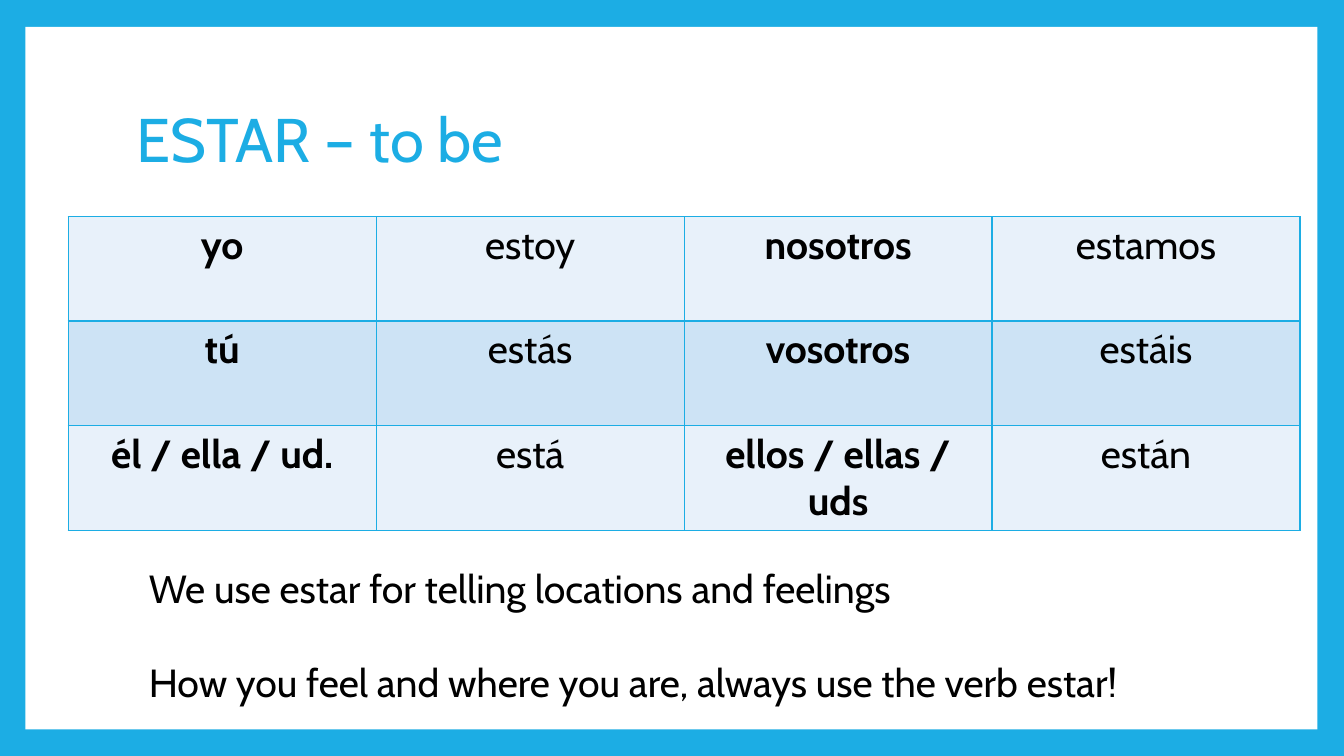
from lxml.etree import SubElement
from pptx import Presentation
from pptx.dml.color import RGBColor
from pptx.enum.shapes import MSO_SHAPE
from pptx.enum.text import MSO_ANCHOR, PP_ALIGN
from pptx.oxml.ns import qn
from pptx.util import Cm, Pt

FONT = "Cabin"
BLUE = "1CADE4"
BLACK = "000000"
WHITE = "FFFFFF"
BANDS = ["E8F1FA", "CDE3F5"]
CONJUGATION = [
    ["yo", "estoy", "nosotros", "estamos"],
    ["tú", "estás", "vosotros", "estáis"],
    ["él / ella / ud.", "está", "ellos / ellas / uds", "están"],
]
USAGE = [
    "We use estar for telling locations and feelings",
    "How you feel and where you are, always use the verb estar!",
]


def paint(color_format, color):
    color_format.rgb = RGBColor.from_string(color)


def fill_with(fill, color):
    fill.solid()
    paint(fill.fore_color, color)


def add_text(paragraph, text, size, color=BLACK, bold=False):
    run = paragraph.add_run()
    run.text = text
    run.font.name = FONT
    run.font.size = Pt(size)
    run.font.bold = bold
    paint(run.font.color, color)


def add_title(slide, text):
    title = slide.shapes.title
    title.left, title.top = Cm(3.18), Cm(1.7)
    title.width, title.height = Cm(27.43), Cm(3.76)
    title.text_frame.vertical_anchor = MSO_ANCHOR.MIDDLE
    heading = title.text_frame.paragraphs[0]
    heading.alignment = PP_ALIGN.LEFT
    heading.line_spacing = 0.9
    add_text(heading, text, 44, BLUE)


def add_panel(slide):
    panel = slide.shapes.add_shape(
        MSO_SHAPE.RECTANGLE, Cm(0.64), Cm(0.68), Cm(32.56), Cm(17.7))
    panel.shadow.inherit = False
    fill_with(panel.fill, WHITE)
    panel.line.fill.background()
    slide.shapes.title.element.addprevious(panel.element)


def add_borders(cell, color):
    properties = cell._tc.get_or_add_tcPr()
    for side in ("a:lnL", "a:lnR", "a:lnT", "a:lnB"):
        border = SubElement(properties, qn(side), w=str(Pt(1)))
        solid = SubElement(border, qn("a:solidFill"))
        SubElement(solid, qn("a:srgbClr"), val=color)


def add_conjugation(slide, verb_forms):
    rows, columns = len(verb_forms), len(verb_forms[0])
    table = slide.shapes.add_table(
        rows, columns, Cm(1.72), Cm(5.46), Cm(7.76 * columns), Cm(2.63 * rows)).table
    table.first_row = False
    table.horz_banding = False
    for r, forms in enumerate(verb_forms):
        for c, form in enumerate(forms):
            cell = table.cell(r, c)
            add_borders(cell, BLUE)
            fill_with(cell.fill, BANDS[r % 2])
            entry = cell.text_frame.paragraphs[0]
            entry.alignment = PP_ALIGN.CENTER
            add_text(entry, form, 28, bold=c % 2 == 0)


def add_usage(slide, sentences):
    frame = slide.shapes.add_textbox(Cm(3.5), Cm(14.1), Cm(26.26), Cm(3.84)).text_frame
    frame.word_wrap = True
    for i, sentence in enumerate(sentences):
        paragraph = frame.add_paragraph() if i else frame.paragraphs[0]
        paragraph.space_before = Pt(33.6 if i else 0)
        add_text(paragraph, sentence, 28)


def main():
    presentation = Presentation()
    presentation.slide_width, presentation.slide_height = Cm(33.87), Cm(19.05)
    slide = presentation.slides.add_slide(presentation.slide_layouts[5])
    fill_with(slide.background.fill, BLUE)
    add_panel(slide)
    add_title(slide, "ESTAR – to be")
    add_conjugation(slide, CONJUGATION)
    add_usage(slide, USAGE)
    presentation.save("out.pptx")


if __name__ == "__main__":
    main()
